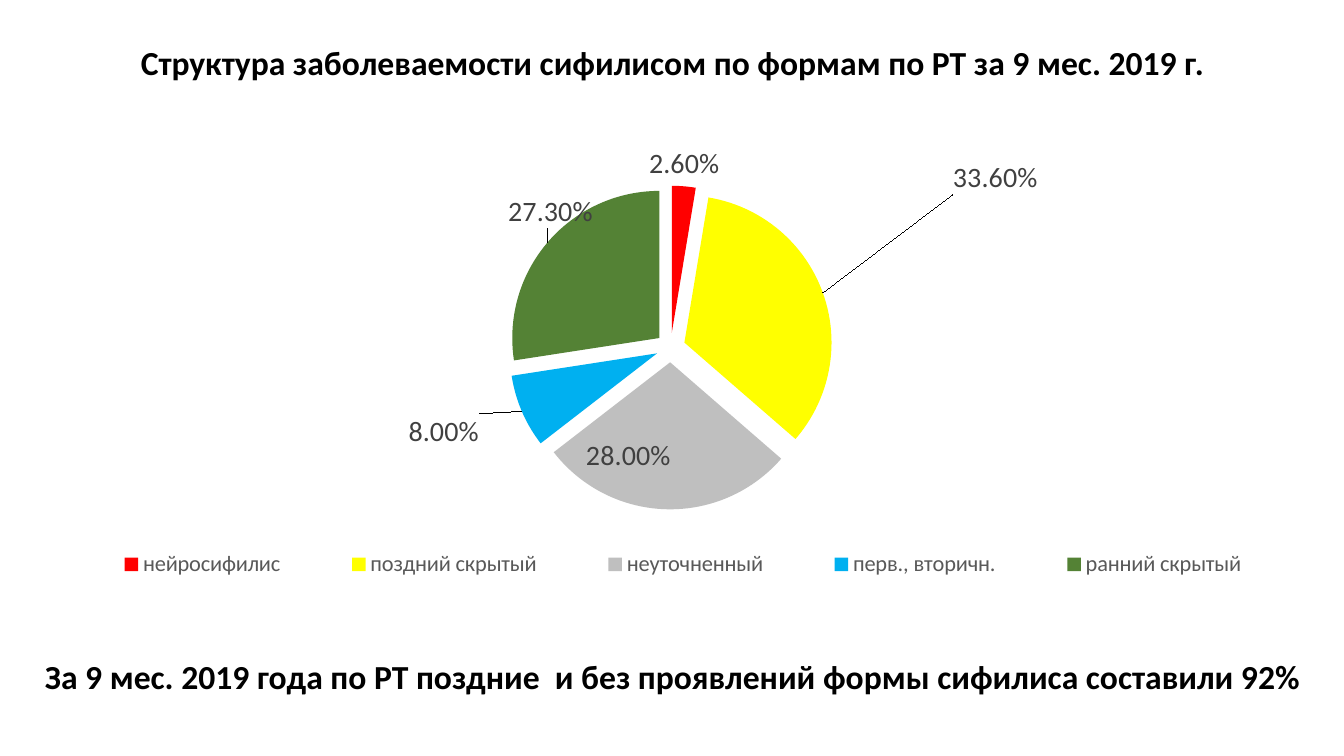
from dataclasses import dataclass

from lxml import etree
from pptx import Presentation
from pptx.chart.data import CategoryChartData
from pptx.dml.color import RGBColor
from pptx.enum.chart import XL_CHART_TYPE, XL_LABEL_POSITION, XL_LEGEND_POSITION
from pptx.enum.text import MSO_ANCHOR, PP_ALIGN
from pptx.oxml import parse_xml
from pptx.oxml.ns import nsdecls, qn
from pptx.util import Inches, Pt

PIE = XL_CHART_TYPE.PIE
OUTER = XL_LABEL_POSITION.OUTSIDE_END
BOTTOM = XL_LEGEND_POSITION.BOTTOM
MIDDLE = MSO_ANCHOR.MIDDLE
CENTER = PP_ALIGN.CENTER

FACE = "Calibri"
FORMAT = "0.00%"
BLACK = RGBColor(0x00, 0x00, 0x00)
DARK = RGBColor(0x40, 0x40, 0x40)
GRAY = RGBColor(0x59, 0x59, 0x59)
RED = RGBColor(0xFF, 0x00, 0x00)
YELLOW = RGBColor(0xFF, 0xFF, 0x00)
SILVER = RGBColor(0xBF, 0xBF, 0xBF)
BLUE = RGBColor(0x00, 0xB0, 0xF0)
GREEN = RGBColor(0x54, 0x82, 0x35)


@dataclass(frozen=True)
class Slice:
    name: str
    value: float
    color: RGBColor
    shift: tuple[float, float] | None = None


SLICES = (
    Slice("нейросифилис", 0.026, RED),
    Slice("поздний скрытый", 0.336, YELLOW, (0.1, -0.2)),
    Slice("неуточненный", 0.28, SILVER, (-0.03, -0.16)),
    Slice("перв., вторичн.", 0.08, BLUE, (-0.03, 0)),
    Slice("ранний скрытый", 0.273, GREEN, (0.04, -0.02)),
)


def style(font, size: float, color: RGBColor, bold: bool = False) -> None:
    font.name = FACE
    font.size = Pt(size)
    font.bold = bold
    font.color.rgb = color


def place(shape, left: float, top: float, width: float, height: float) -> None:
    shape.left, shape.top = Inches(left), Inches(top)
    shape.width, shape.height = Inches(width), Inches(height)


def write(shape, text: str, spacing: float) -> None:
    frame = shape.text_frame
    frame.word_wrap = True
    frame.vertical_anchor = MIDDLE
    line = frame.paragraphs[0]
    line.alignment = CENTER
    line.line_spacing = spacing
    run = line.add_run()
    run.text = text
    style(run.font, 24, BLACK, True)


def layout(x: float, y: float, size: tuple[float, float] | None = None,
           inner: bool = False) -> etree._Element:
    parts = '<c:layoutTarget val="inner"/>' if inner else ""
    if size:
        parts += '<c:xMode val="edge"/><c:yMode val="edge"/>'
    parts += f'<c:x val="{x}"/><c:y val="{y}"/>'
    if size:
        parts += f'<c:w val="{size[0]}"/><c:h val="{size[1]}"/>'
    return parse_xml(
        f'<c:layout {nsdecls("c")}><c:manualLayout>{parts}</c:manualLayout></c:layout>'
    )


def set_layout(node: etree._Element, item: etree._Element, after: str | None) -> None:
    for old in node.findall(qn("c:layout")):
        node.remove(old)
    if after:
        node.find(qn(after)).addnext(item)
    else:
        node.insert(0, item)


def add_pie(slide) -> None:
    data = CategoryChartData(number_format=FORMAT)
    data.categories = [part.name for part in SLICES]
    data.add_series("Series 1", [part.value for part in SLICES])
    box = (Inches(0.6), Inches(1.25), Inches(12.35), Inches(4.78))
    chart = slide.shapes.add_chart(PIE, *box, data).chart
    chart.has_title = False
    style(chart.font, 10, BLACK)
    chart.has_legend = True
    legend = chart.legend
    legend.position = BOTTOM
    legend.include_in_layout = False
    style(legend.font, 16, GRAY)
    set_layout(legend._element, layout(0, 0.86, (1, 0.1)), "c:legendPos")
    area = chart._chartSpace.chart.plotArea
    set_layout(area, layout(0.36, 0.12, (0.26, 0.68), True), None)

    plot = chart.plots[0]
    plot.vary_by_categories = True
    series = plot.series[0]
    labels = series.data_labels
    labels.show_value = True
    labels.number_format = FORMAT
    labels.number_format_is_linked = False
    labels.position = OUTER
    style(labels.font, 20, DARK)
    for index, part in enumerate(SLICES):
        point = series.points[index]
        point.format.fill.solid()
        point.format.fill.fore_color.rgb = part.color
        if part.shift:
            label = point.data_label
            style(label.font, 20, DARK)
            label.position = OUTER
            node = labels._element.findall(qn("c:dLbl"))[-1]
            set_layout(node, layout(*part.shift), "c:idx")
    burst = parse_xml(f'<c:explosion {nsdecls("c")} val="10"/>')
    series._element.find(qn("c:dPt")).addprevious(burst)


def main() -> None:
    deck = Presentation()
    deck.slide_width, deck.slide_height = Inches(13.33), Inches(7.5)
    slide = deck.slides.add_slide(deck.slide_layouts[5])
    title = slide.shapes.title
    place(title, 0.92, 0.19, 11.5, 0.9)
    write(title, "Структура заболеваемости сифилисом по формам по РТ за 9 мес. 2019 г.", 0.9)
    add_pie(slide)
    note = slide.shapes.add_textbox(Inches(0.32), Inches(6.21), Inches(12.7), Inches(1))
    write(note, "За 9 мес. 2019 года по РТ поздние  и без проявлений формы сифилиса составили 92%", 1)
    deck.save("out.pptx")


if __name__ == "__main__":
    main()
